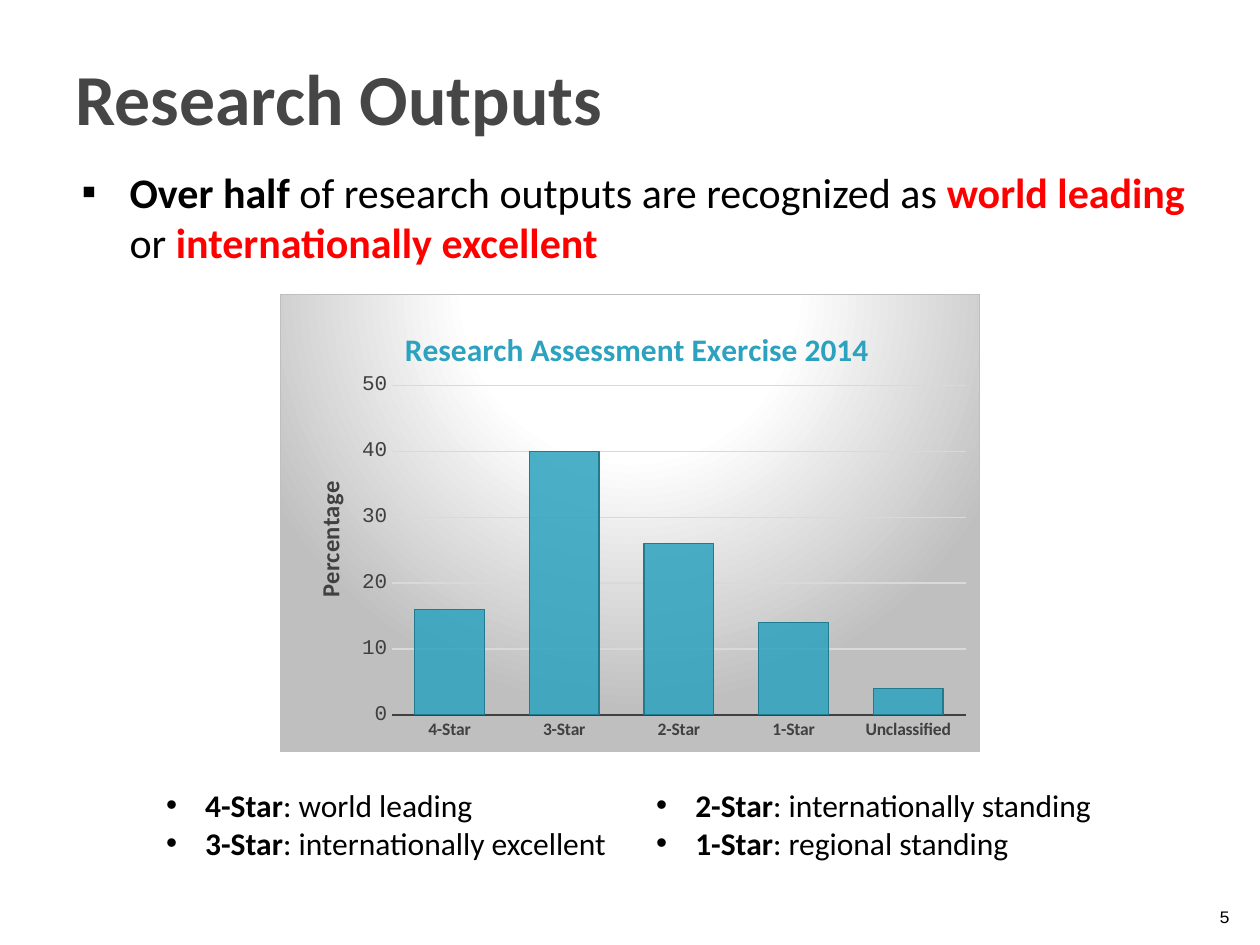
from lxml import etree
from pptx import Presentation
from pptx.chart.data import CategoryChartData
from pptx.dml.color import RGBColor
from pptx.enum import chart as c, text as t
from pptx.oxml import parse_xml
from pptx.oxml.ns import nsdecls, qn
from pptx.util import Inches, Pt

BLACK = RGBColor(0, 0, 0)
RED = RGBColor(0xFF, 0, 0)
HEADING = RGBColor(0x46, 0x46, 0x46)
AXIS = RGBColor(0x40, 0x40, 0x40)
GRID = RGBColor(0xD9, 0xD9, 0xD9)
TEAL = RGBColor(0x2D, 0xA2, 0xBF)
DARK_TEAL = RGBColor(0x22, 0x7A, 0x8F)

deck = Presentation()
deck.slide_width, deck.slide_height = Inches(10), Inches(7.5)
page = deck.slides.add_slide(deck.slide_layouts[6])


def add_text(place, paragraphs, size, font="Calibri", bullet=None, indent=0):
    """Add a box; each paragraph is a list of (words, bold, colour)."""
    box = page.shapes.add_textbox(*[Inches(n) for n in place])
    frame = box.text_frame
    frame.word_wrap = True
    for i, spans in enumerate(paragraphs):
        para = frame.add_paragraph() if i else frame.paragraphs[0]
        para.font.size, para.font.name = Pt(size), font
        for words, bold, colour in spans:
            span = para.add_run()
            span.text = words
            span.font.bold = bold
            span.font.color.rgb = colour
        if bullet:
            props = para._p.get_or_add_pPr()
            props.set("marL", str(Inches(indent)))
            props.set("indent", str(-Inches(indent)))
            mark_font = etree.Element(qn("a:buFont"), typeface="Arial")
            mark = etree.Element(qn("a:buChar"), char=bullet)
            props.insert_element_before(mark_font, "a:tabLst", "a:defRPr", "a:extLst")
            props.insert_element_before(mark, "a:tabLst", "a:defRPr", "a:extLst")
    return frame


def set_layout(part, **fractions):
    """Fix a chart part's place as fractions of the chart area."""
    for old in part.findall(qn("c:layout")):
        part.remove(old)
    layout = etree.Element(qn("c:layout"))
    manual = etree.SubElement(layout, qn("c:manualLayout"))
    if "w" in fractions:
        etree.SubElement(manual, qn("c:layoutTarget"), val="inner")
    for mode in ("xMode", "yMode"):
        etree.SubElement(manual, qn(f"c:{mode}"), val="edge")
    for name, value in fractions.items():
        etree.SubElement(manual, qn(f"c:{name}"), val=str(value))
    part.insert(0 if part.find(qn("c:tx")) is None else 1, layout)


# Heading, page number and main point
title = add_text((0.5, 0.14, 9, 1.25), [[("Research Outputs", True, HEADING)]], 41)
title.vertical_anchor = t.MSO_ANCHOR.MIDDLE

number = add_text((9.46, 7.01, 0.4, 0.4), [[("5", False, BLACK)]], 10, "Courier New")
number.vertical_anchor = t.MSO_ANCHOR.BOTTOM
number.paragraphs[0].alignment = t.PP_ALIGN.RIGHT

add_text((0.55, 1.27, 9.18, 0.91), [[
    ("Over half ", True, BLACK),
    ("of research outputs are recognized as ", False, BLACK),
    ("world leading ", True, RED),
    ("or ", False, BLACK),
    ("internationally excellent", True, RED),
]], 24, bullet="▪", indent=0.38)

# Chart
data = CategoryChartData()
data.categories = ["4-Star", "3-Star", "2-Star", "1-Star", "Unclassified"]
data.add_series("Series 1", [16, 40, 26, 14, 4])
chart = page.shapes.add_chart(
    c.XL_CHART_TYPE.COLUMN_CLUSTERED,
    Inches(2.22), Inches(2.33), Inches(5.56), Inches(3.64), data).chart
chart.has_legend = False
chart.font.name, chart.font.size = "Courier New", Pt(10)
chart.font.color.rgb = BLACK

ratings, percent = chart.category_axis, chart.value_axis
chart.has_title = percent.has_title = True
for heading, words, size, colour in (
        (chart.chart_title, "Research Assessment Exercise 2014", 18, TEAL),
        (percent.axis_title, "Percentage", 14, AXIS)):
    heading.text_frame.text = words
    font = heading.text_frame.paragraphs[0].font
    font.name, font.size, font.bold = "Calibri", Pt(size), True
    font.color.rgb = colour
percent.axis_title.text_frame._txBody.bodyPr.set("rot", "-5400000")
percent.axis_title.text_frame._txBody.bodyPr.set("vert", "horz")

for axis, name, size, bold in ((ratings, "Calibri", 10, True),
                               (percent, "Courier New", 12, False)):
    axis.major_tick_mark = axis.minor_tick_mark = c.XL_TICK_MARK.NONE
    font = axis.tick_labels.font
    font.name, font.size, font.bold = name, Pt(size), bold
    font.color.rgb = AXIS
ratings.format.line.color.rgb = AXIS
ratings.format.line.width = Pt(1.5)
percent.format.line.fill.background()
percent.minimum_scale, percent.maximum_scale, percent.major_unit = 0, 50, 10
percent.major_gridlines.format.line.color.rgb = GRID
percent.major_gridlines.format.line.width = Pt(0.75)

plot = chart.plots[0]
plot.gap_width = 65
plot.vary_by_categories = False
bars = plot.series[0].format
bars.fill.solid()
bars.fill.fore_color.rgb = TEAL
fill_colour = bars.fill._xPr.find(".//" + qn("a:srgbClr"))
etree.SubElement(fill_colour, qn("a:alpha"), val="85000")
bars.line.color.rgb = DARK_TEAL
bars.line.width = Pt(0.75)

chart_root = chart._chartSpace
set_layout(chart_root.chart.plotArea, x=0.16, y=0.2, w=0.82, h=0.72)
set_layout(chart.chart_title._element, x=0.17, y=0.06)
set_layout(percent.axis_title._element, x=0.04, y=0.4)

stops = "".join(f'<a:gs pos="{position}"><a:srgbClr val="{colour}"/></a:gs>'
                for position, colour in ((0, "FFFFFF"), (39000, "FFFFFF"), (100000, "BFBFBF")))
chart_root.chart.addnext(parse_xml(
    f'<c:spPr {nsdecls("c", "a")}><a:gradFill><a:gsLst>{stops}</a:gsLst>'
    '<a:path path="circle"><a:fillToRect l="50000" t="-80000" r="50000" b="180000"/></a:path>'
    '</a:gradFill><a:ln w="9525"><a:solidFill><a:srgbClr val="BFBFBF"/></a:solidFill></a:ln>'
    '</c:spPr>'))

# Key to the ratings
for left, entries in (
        (1.22, (("4-Star", "world leading"), ("3-Star", "internationally excellent"))),
        (5.11, (("2-Star", "internationally standing"), ("1-Star", "regional standing")))):
    add_text((left, 6.19, 4.08, 0.71),
             [[(star, True, BLACK), (f": {meaning}", False, BLACK)] for star, meaning in entries],
             18, bullet="•", indent=0.31)

deck.save("out.pptx")
